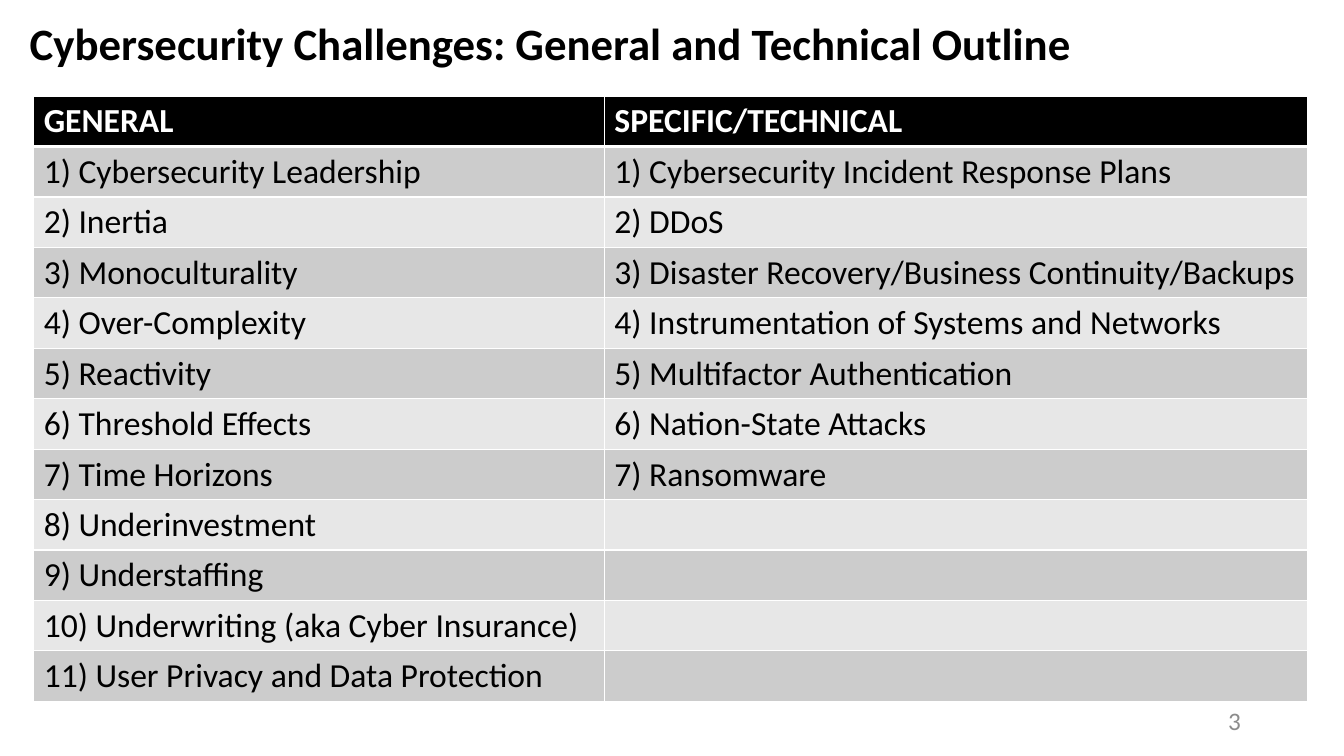
from itertools import zip_longest
from lxml import etree
from pptx import Presentation
from pptx.dml.color import RGBColor
from pptx.enum import text
from pptx.oxml import ns
from pptx.util import Cm, Pt

FONT = "Calibri"
COLORS = {"black": "000000", "white": "FFFFFF", "dark": "CCCCCC",
          "light": "E7E7E7", "gray": "8C8C8C"}
GENERAL = ["Cybersecurity Leadership", "Inertia", "Monoculturality",
           "Over-Complexity", "Reactivity", "Threshold Effects",
           "Time Horizons", "Underinvestment", "Understaffing",
           "Underwriting (aka Cyber Insurance)",
           "User Privacy and Data Protection"]
TECHNICAL = ["Cybersecurity Incident Response Plans", "DDoS",
             "Disaster Recovery/Business Continuity/Backups",
             "Instrumentation of Systems and Networks",
             "Multifactor Authentication", "Nation-State Attacks",
             "Ransomware"]


def rgb(name):
    return RGBColor.from_string(COLORS[name])


def add_run(par, words, size, color, bold=False):
    run = par.add_run()
    run.text = words
    run.font.name = FONT
    run.font.size = Pt(size)
    run.font.bold = bold
    run.font.color.rgb = rgb(color)


def add_line(slide, box, words, size, color, bold=False,
             align=text.PP_ALIGN.LEFT, pitch=1.0):
    """Place one line of text, centred vertically in its box."""
    frame = slide.shapes.add_textbox(*map(Cm, box)).text_frame
    frame.word_wrap = True
    frame.vertical_anchor = text.MSO_ANCHOR.MIDDLE
    par = frame.paragraphs[0]
    par.alignment = align
    par.line_spacing = pitch
    add_run(par, words, size, color, bold)


def add_edges(cell, top, bottom):
    """Draw white cell borders; top and bottom are widths in points."""
    props = cell._tc.get_or_add_tcPr()
    for side, width in zip("LRTB", (1, 1, top, bottom)):
        line = etree.SubElement(props, ns.qn(f"a:ln{side}"), w=str(Pt(width)))
        fill = etree.SubElement(line, ns.qn("a:solidFill"))
        etree.SubElement(fill, ns.qn("a:srgbClr"), val=COLORS["white"])


def add_outline(slide, box, widths, heads, lists):
    """Fill a table with one numbered list under each heading."""
    columns = [[f"{n}) {item}" for n, item in enumerate(items, 1)]
               for items in lists]
    rows = [heads, *zip_longest(*columns, fillvalue="")]
    table = slide.shapes.add_table(len(rows), len(heads), *map(Cm, box)).table
    for col, width in zip(table.columns, widths):
        col.width = Cm(width)
    for r, row in enumerate(rows):
        table.rows[r].height = Cm(box[3] / len(rows))
        head = r == 0
        shade = "black" if head else "dark" if r % 2 else "light"
        for c, words in enumerate(row):
            cell = table.cell(r, c)
            add_edges(cell, 3 if r == 1 else 1, 3 if head else 1)
            cell.fill.solid()
            cell.fill.fore_color.rgb = rgb(shade)
            if words:
                add_run(cell.text_frame.paragraphs[0], words, 24,
                        "white" if head else "black", head)


def main():
    deck = Presentation()
    deck.slide_width, deck.slide_height = Cm(33.87), Cm(19.05)
    slide = deck.slides.add_slide(deck.slide_layouts[6])
    add_line(slide, (0.5, 0.46, 32.8, 1.42),
             "Cybersecurity Challenges: General and Technical Outline",
             32, "black", bold=True, pitch=0.9)
    add_line(slide, (29.67, 17.65, 1.85, 1.02), "3", 18, "gray",
             align=text.PP_ALIGN.RIGHT)
    add_outline(slide, (0.85, 2.42, 32.11, 15.24), (14.38, 17.73),
                ("GENERAL", "SPECIFIC/TECHNICAL"), (GENERAL, TECHNICAL))
    deck.save("out.pptx")


if __name__ == "__main__":
    main()
